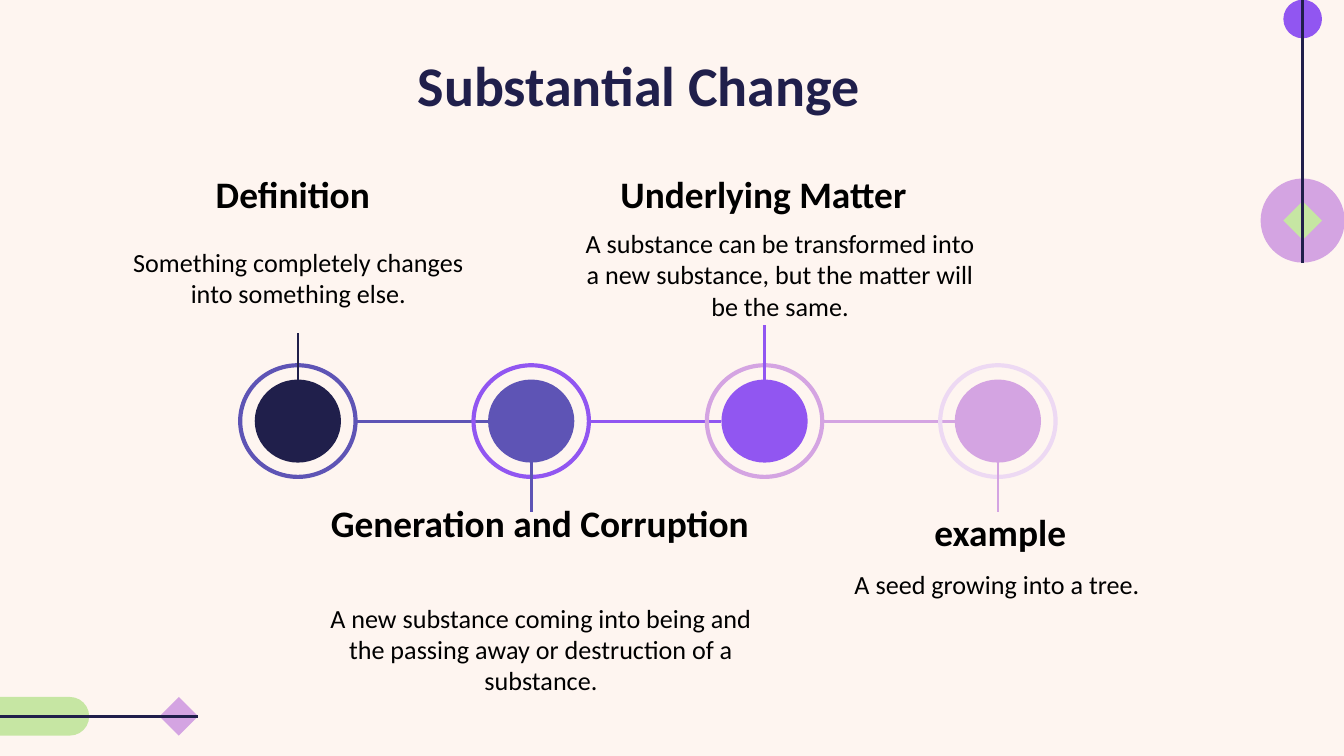
from lxml.etree import SubElement
from pptx import Presentation
from pptx.dml.color import RGBColor
from pptx.enum.shapes import MSO_CONNECTOR, MSO_SHAPE
from pptx.enum.text import PP_ALIGN
from pptx.oxml.ns import qn
from pptx.util import Cm, Pt

NAVY, INDIGO, VIOLET = "201F4B", "5E54B5", "9156F1"
MAUVE, PALE, GREEN = "D4A4E2", "EDD9F3", "C6E6A3"
CREAM, BLACK = "FEF5F0", "000000"


def paint(form, tint):
    form.solid()
    form.fore_color.rgb = RGBColor.from_string(tint)


class Deck:
    font = "Calibri"
    thin = 1.5
    thick = 2.25

    def __init__(self, wide, high):
        self.show = Presentation()
        self.show.slide_width = Cm(wide)
        self.show.slide_height = Cm(high)
        self.slide = self.show.slides.add_slide(self.show.slide_layouts[6])
        paint(self.slide.background.fill, CREAM)

    def shape(self, kind, x, y, wide, high, fill=None, edge=None):
        item = self.slide.shapes.add_shape(
            kind, Cm(x - wide / 2), Cm(y - high / 2), Cm(wide), Cm(high))
        item.shadow.inherit = False
        if fill:
            paint(item.fill, fill)
        else:
            item.fill.background()
        if edge:
            paint(item.line.fill, edge)
            item.line.width = Pt(self.thick)
        else:
            item.line.fill.background()
        return item

    def line(self, x, y, end, stop, tint):
        item = self.slide.shapes.add_connector(
            MSO_CONNECTOR.STRAIGHT, Cm(x), Cm(y), Cm(end), Cm(stop))
        paint(item.line.fill, tint)
        item.line.width = Pt(self.thin)
        SubElement(item._element.spPr, qn("a:effectLst"))

    def text(self, words, x, y, wide, high, size, bold=False, tint=BLACK, pad=0.13):
        box = self.slide.shapes.add_textbox(Cm(x), Cm(y), Cm(wide), Cm(high))
        frame = box.text_frame
        frame.word_wrap = True
        frame.margin_top = frame.margin_bottom = Cm(pad)
        para = frame.paragraphs[0]
        para.text = words
        para.alignment = PP_ALIGN.CENTER
        para.font.name = self.font
        para.font.size = Pt(size)
        para.font.bold = bold
        paint(para.font.fill, tint)

    def head(self, words, *place):
        self.text(words, *place, 20, True)

    def body(self, words, *place):
        self.text(words, *place, 14)

    def save(self):
        self.show.save("out.pptx")


def trim(deck):
    side, foot, dot = 24.62, 13.54, 0.73
    deck.shape(MSO_SHAPE.OVAL, side, 4.17, 1.59, 1.59, MAUVE)
    deck.shape(MSO_SHAPE.DIAMOND, side, 4.17, dot, dot, GREEN)
    deck.shape(MSO_SHAPE.OVAL, side, 0.36, dot, dot, VIOLET)
    deck.line(side, 4.97, side, 0, NAVY)
    pill = deck.shape(MSO_SHAPE.ROUNDED_RECTANGLE, -0.03, foot, 3.43, dot, GREEN)
    pill.adjustments[0] = 0.5
    deck.shape(MSO_SHAPE.DIAMOND, 3.38, foot, dot, dot, MAUVE)
    deck.line(0, foot, 3.74, foot, NAVY)


def chain(deck):
    left, step, mid = 5.63, 4.41, 7.96
    ring, disc = (2.18, 2.11), (1.63, 1.57)
    tints = [NAVY, INDIGO, VIOLET, MAUVE, PALE]
    stems = [(6.3, 7.24), (8.74, 9.68), (6.15, 7.19), (8.74, 9.68)]
    for i, (top, base) in enumerate(stems):
        x = left + i * step
        if i:
            deck.line(x - step + ring[0] / 2, mid, x - disc[0] / 2, mid, tints[i])
        deck.shape(MSO_SHAPE.OVAL, x, mid, *ring, edge=tints[i + 1])
        deck.shape(MSO_SHAPE.OVAL, x, mid, *disc, fill=tints[i])
        deck.line(x, top, x, base, tints[i])


def main():
    deck = Deck(25.4, 14.29)
    trim(deck)
    deck.text("Substantial Change", 1.37, 0.71, 21.41, 1.6, 30, True, NAVY, 0.25)
    chain(deck)
    deck.head("Definition", 0.99, 3.1, 9.09, 1.12)
    deck.body("Something completely changes into something else.",
              2.11, 4.52, 7.06, 1.45)
    deck.head("Generation and Corruption", 5.61, 9.32, 9.19, 1.96)
    deck.body("A new substance coming into being and the passing away "
              "or destruction of a substance.", 5.82, 11.25, 8.81, 2.06)
    deck.head("Underlying Matter", 10.85, 3.1, 7.16, 1.12)
    deck.body("A substance can be transformed into a new substance, "
              "but the matter will be the same.", 10.77, 4.17, 7.95, 2.06)
    deck.head("example", 16.95, 9.5, 3.91, 1.12)
    deck.body("A seed growing into a tree.", 15.34, 10.62, 7.01, 0.86)
    deck.save()


if __name__ == "__main__":
    main()
